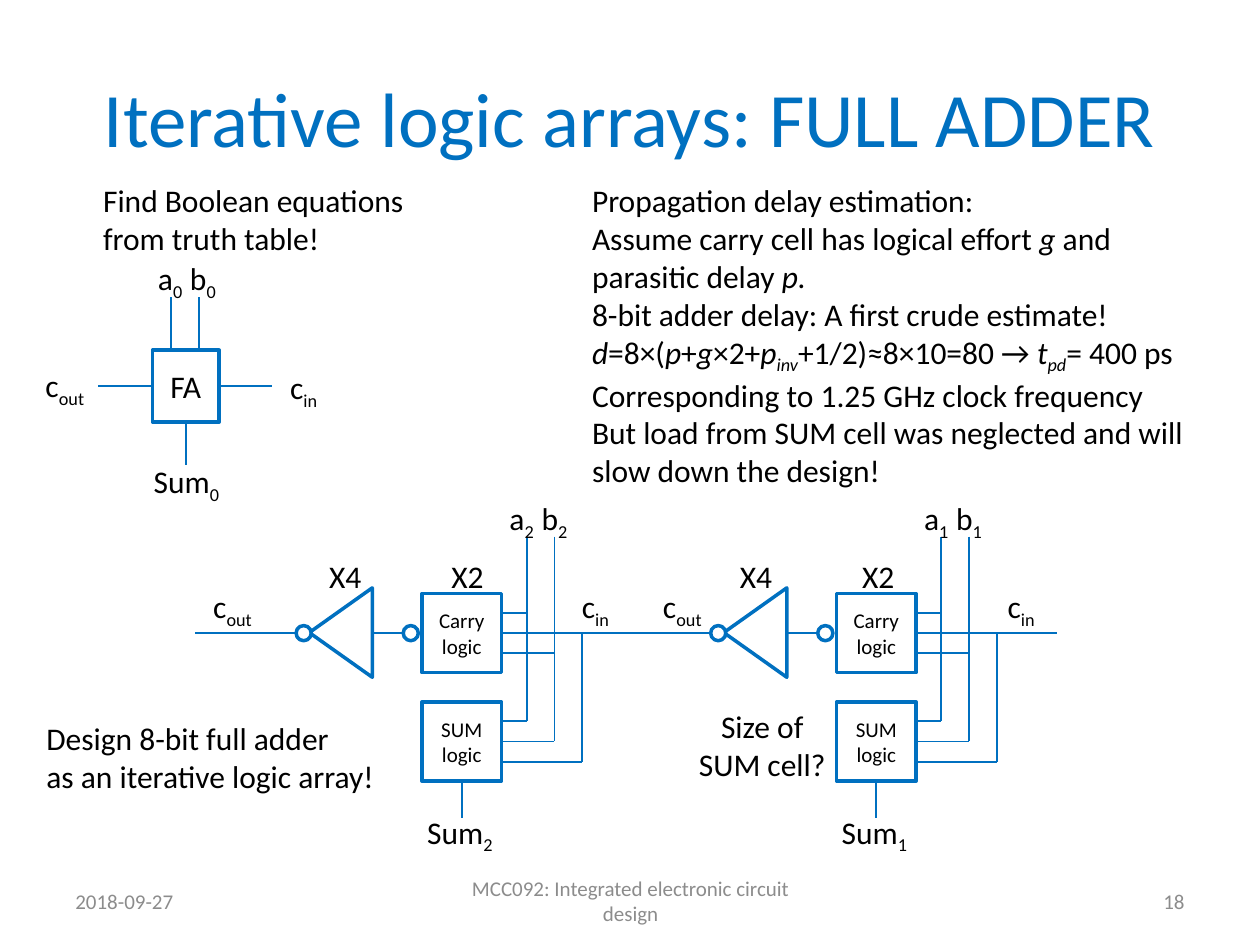
from lxml import etree
from pptx import Presentation
from pptx.dml.color import RGBColor
from pptx.enum.shapes import MSO_CONNECTOR, MSO_SHAPE
from pptx.enum.text import MSO_ANCHOR, PP_ALIGN
from pptx.oxml.ns import qn
from pptx.util import Inches, Pt

LEFT, CENTER, RIGHT = PP_ALIGN.LEFT, PP_ALIGN.CENTER, PP_ALIGN.RIGHT
MIDDLE, TOP = MSO_ANCHOR.MIDDLE, MSO_ANCHOR.TOP
RECT, CIRCLE = MSO_SHAPE.RECTANGLE, MSO_SHAPE.OVAL
TRIANGLE, STRAIGHT = MSO_SHAPE.ISOSCELES_TRIANGLE, MSO_CONNECTOR.STRAIGHT
BOTTOM_SIDE, LEFT_SIDE, RIGHT_SIDE = 2, 1, 3

FONT, BLUE, BLACK, GREY, WHITE = "Calibri", "0070C0", "000000", "8C8C8C", "FFFFFF"

# The slide is a grid of 10 columns by 7.5 rows of square cells
CELL = Inches(1)
BLOCK = 0.63     # side of a logic block
PIN = 0.16       # distance between the pins of a block
BUBBLE = 0.12    # diameter of an inversion bubble
CARRY_Y, SUM_Y = 4.71, 5.57


def grid(*cells):
    return [round(cell * CELL) for cell in cells]


def color(value):
    return RGBColor.from_string(value)


def format_span(span, size, ink, style=""):
    """Style letters: i for italic, s for subscript."""
    span.font.name, span.font.size = FONT, Pt(size)
    span.font.color.rgb = color(ink)
    if "i" in style:
        span.font.italic = True
    if "s" in style:
        span.font._element.set("baseline", "-25000")


def write(frame, paragraphs, size=18, ink=BLACK, align=LEFT, anchor=TOP):
    """Each paragraph is a string or a list of (text, style) spans."""
    frame.word_wrap = True
    frame.vertical_anchor = anchor
    for number, spans in enumerate(paragraphs):
        para = frame.add_paragraph() if number else frame.paragraphs[0]
        para.alignment = align
        if isinstance(spans, str):
            spans = [(spans, "")]
        for text, style in spans:
            span = para.add_run()
            span.text = text
            format_span(span, size, ink, style)


def add_text(slide, place, paragraphs, **options):
    box = slide.shapes.add_textbox(*grid(*place))
    write(box.text_frame, paragraphs, **options)
    return box


def add_panel(slide, place, paragraphs):
    panel = add_text(slide, place, paragraphs)
    panel.fill.solid()
    panel.fill.fore_color.rgb = color(WHITE)


def add_label(slide, x, y, width, name, index=""):
    spans = [(name, ""), (index, "s")] if index else name
    add_text(slide, (x, y, width, 0.4), [spans], align=CENTER)


def add_outline(slide, kind, place, rotation=0):
    shape = slide.shapes.add_shape(kind, *grid(*place))
    shape.shadow.inherit = False
    shape.rotation = rotation
    shape.fill.solid()
    shape.fill.fore_color.rgb = color(WHITE)
    shape.line.color.rgb = color(BLUE)
    shape.line.width = Pt(2)
    return shape


def add_block(slide, place, text, size):
    block = add_outline(slide, RECT, place)
    write(block.text_frame, [text], size, align=CENTER, anchor=MIDDLE)
    return block


def add_wire(slide, x1, y1, x2, y2, block=None, side=None):
    wire = slide.shapes.add_connector(STRAIGHT, *grid(x1, y1, x2, y2))
    wire.line.color.rgb = color(BLUE)
    wire.line.width = Pt(1)
    etree.SubElement(wire._element.spPr, qn("a:effectLst"))
    if block is not None:
        wire.begin_connect(block, side)


def add_full_adder(slide):
    x, y, width, height = 1.21, 2.78, 0.53, 0.57
    middle_x, middle_y = x + width / 2, y + height / 2
    block = add_block(slide, (x, y, width, height), "FA", 18)
    add_wire(slide, x, middle_y, 0.78, middle_y, block, LEFT_SIDE)
    add_wire(slide, x + width, middle_y, 2.16, middle_y, block, RIGHT_SIDE)
    add_wire(slide, middle_x, y + height, middle_x, 3.69, block, BOTTOM_SIDE)
    for name, wire_x, label_x in (("a", 1.36, 1.14), ("b", 1.58, 1.4)):
        add_wire(slide, wire_x, 2.36, wire_x, y)
        add_label(slide, label_x, 2.01, 0.42, name, "0")
    add_label(slide, 2.13, 2.87, 0.56, "c", "in")
    add_label(slide, 0.2, 2.86, 0.63, "c", "out")
    add_label(slide, 1.05, 3.62, 0.86, "Sum", "0")


def add_bit_cell(slide, x, index, label_x, out_x, in_x):
    """One bit of the array; x is the left side of its logic blocks."""
    edge, middle_x = x + BLOCK, x + BLOCK / 2
    carry_mid, sum_mid = CARRY_Y + BLOCK / 2, SUM_Y + BLOCK / 2
    carry = add_block(slide, (x, CARRY_Y, BLOCK, BLOCK), "Carry logic", 12)
    total = add_block(slide, (x, SUM_Y, BLOCK, BLOCK), "SUM logic", 12)

    # Operand buses run down past the carry block to the sum block
    buses = (("a", x + 0.83, x + 0.58, -PIN), ("b", x + 1.05, x + 0.84, PIN))
    for (name, bus, text_x, carry_pin), sum_pin in zip(buses, (-PIN, 0)):
        sum_block = total if sum_pin == 0 else None
        add_wire(slide, bus, 4.26, bus, sum_mid + sum_pin)
        add_wire(slide, edge, carry_mid + carry_pin, bus, carry_mid + carry_pin)
        add_wire(slide, edge, sum_mid + sum_pin, bus, sum_mid + sum_pin,
                 sum_block, RIGHT_SIDE)
        add_label(slide, text_x, 3.91, 0.42, name, index)

    # Carry chain with its branch to the sum block
    branch = x + 1.27
    add_wire(slide, edge, carry_mid, x + 1.75, carry_mid, carry, RIGHT_SIDE)
    add_wire(slide, branch, carry_mid, branch, sum_mid + PIN)
    add_wire(slide, edge, sum_mid + PIN, branch, sum_mid + PIN)
    add_wire(slide, x - 0.4, carry_mid, x - 0.15, carry_mid)
    add_wire(slide, x - 1.8, carry_mid, x - 1, carry_mid)
    add_wire(slide, middle_x, SUM_Y + BLOCK, middle_x, 6.49, total, BOTTOM_SIDE)

    # Inverter and the two bubbles
    add_outline(slide, TRIANGLE, (x - 1, 4.77, 0.71, 0.5), 270)
    for bubble_x in (x - 0.15, x - 1):
        add_outline(slide, CIRCLE,
                    (bubble_x, carry_mid - BUBBLE / 2, BUBBLE, BUBBLE))

    add_label(slide, x - 0.14, 6.4, 0.88, "Sum", index)
    add_label(slide, in_x, 4.61, 0.55, "c", "in")
    add_label(slide, out_x, 4.61, 0.59, "c", "out")
    add_label(slide, label_x, 4.37, 0.86, "X4")
    add_label(slide, label_x + 0.97, 4.37, 0.86, "X2")


def add_title(slide, text):
    title = slide.shapes.title
    title.left, title.top, title.width, title.height = grid(0.5, 0.3, 9, 1.25)
    title.text_frame.text = text
    title.text_frame.vertical_anchor = MIDDLE
    title.text_frame.paragraphs[0].alignment = CENTER
    format_span(title.text_frame.paragraphs[0].runs[0], 44, BLUE)


def main():
    deck = Presentation()
    deck.slide_width, deck.slide_height = grid(10, 7.5)
    slide = deck.slides.add_slide(deck.slide_layouts[5])
    add_title(slide, "Iterative logic arrays: FULL ADDER")

    # Explanations
    add_panel(slide, (0.72, 1.39, 2.64, 0.71),
              ["Find Boolean equations from truth table!"])
    add_panel(slide, (4.6, 1.39, 5.12, 2.52), [
        "Propagation delay estimation:",
        [("Assume carry cell has logical effort ", ""), ("g", "i"),
         (" and parasitic delay ", ""), ("p.", "i")],
        "8-bit adder delay: A first crude estimate!",
        [("d", "i"), ("=8×(", ""), ("p", "i"), ("+", ""), ("g", "i"),
         ("×2+", ""), ("p", "i"), ("inv", "is"), ("+1/2)≈8×10=80 → ", ""),
         ("t", "i"), ("pd", "is"), ("= 400 ps", "")],
        "Corresponding to 1.25 GHz clock frequency",
        "But load from SUM cell was neglected and will slow down the design!"])

    # Circuits
    add_full_adder(slide)
    add_bit_cell(slide, 6.64, "1", label_x=5.57, out_x=5.12, in_x=7.83)
    add_bit_cell(slide, 3.35, "2", label_x=2.31, out_x=1.55, in_x=4.45)
    add_text(slide, (5.37, 5.56, 1.36, 0.71), ["Size of", "SUM cell?"],
             align=CENTER)
    add_text(slide, (0.27, 5.66, 2.83, 0.71),
             ["Design 8-bit full adder", "as an iterative logic array!"])

    # Footer
    for x, width, text, align in (
            (0.5, 2.33, "2018-09-27", LEFT),
            (3.42, 3.17, "MCC092: Integrated electronic circuit design", CENTER),
            (7.17, 2.33, "18", RIGHT)):
        add_text(slide, (x, 6.95, width, 0.4), [text], size=12, ink=GREY,
                 align=align, anchor=MIDDLE)

    deck.save("out.pptx")


if __name__ == "__main__":
    main()
